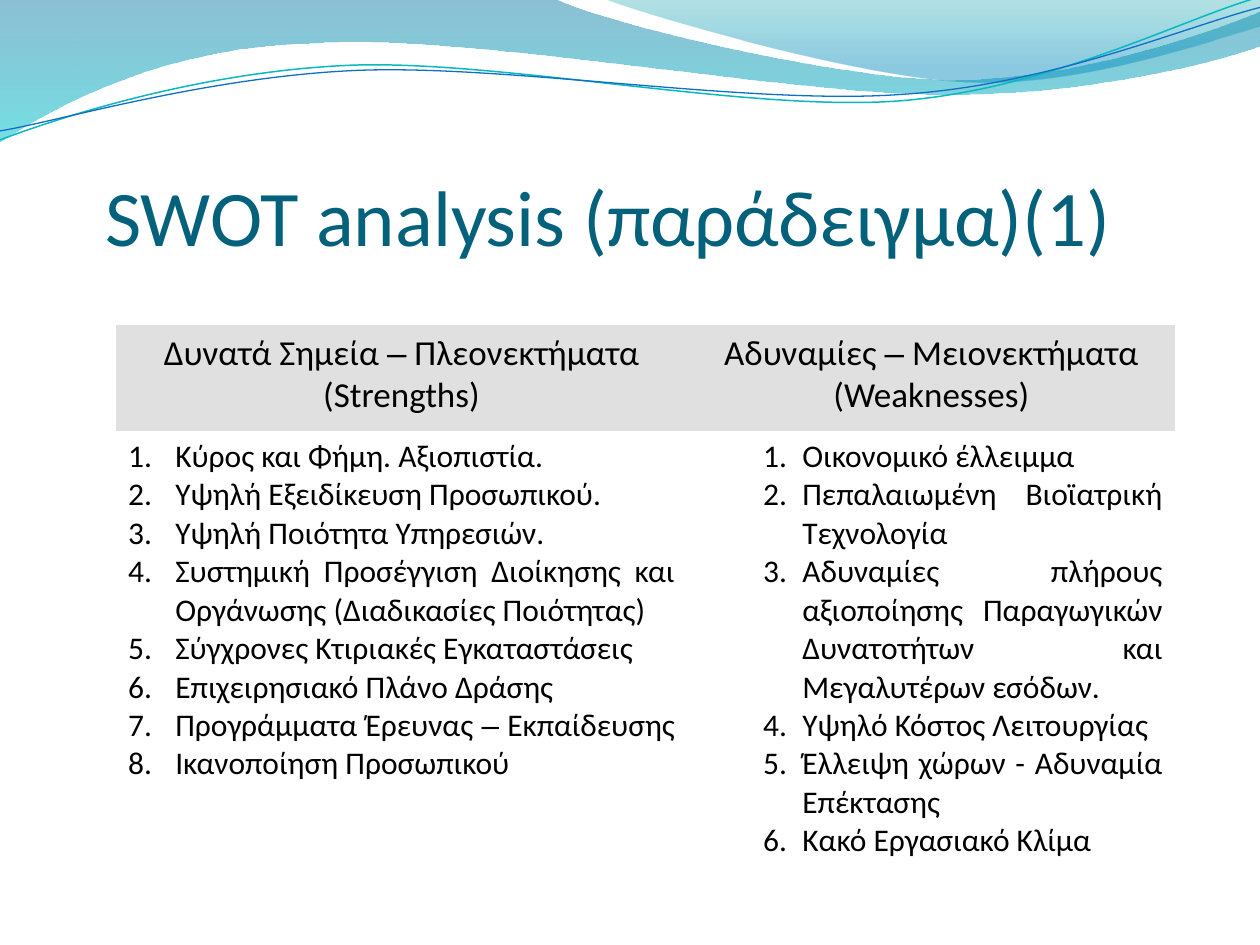
from lxml.etree import SubElement
from pptx import Presentation
from pptx.dml.color import RGBColor
from pptx.enum.text import MSO_ANCHOR, MSO_AUTO_SIZE, PP_ALIGN
from pptx.oxml.ns import qn
from pptx.util import Cm, Pt

COLORS = {
    "title": "04617B", "text": "000000", "header": "E0E0E0",
    "deep": "0074A1", "aqua": "00C6CF", "teal": "00A1A9", "sky": "008BBF",
    "teal_line": "0AB8BF", "blue_line": "0F6FC6",
}
PLAIN_TABLE_STYLE = "{2D5ABB26-0587-4C30-8999-92F81FD0307C}"

LEFT_WAVE = [
    [(0, 0)], [(11.18, -0.03)],
    [(12.09, 0.43), (16.87, 1.6), (19.25, 1.6)],
    [(21.67, 1.6), (24.33, 0.66), (25.4, 0.23)],
    [(25.43, 0.91)],
    [(24.97, 1.12), (22.1, 1.93), (18.95, 1.9)],
    [(15.8, 1.9), (9.7, 0.71), (6.53, 0.86)],
    [(3.28, 0.91), (1.17, 2.11), (-0.03, 2.87)],
    [(0, 0)],
]
RIGHT_WAVE = [
    [(12.17, -0.03)],
    [(12.93, 0.28), (17.32, 1.57), (19.53, 1.65)],
    [(21.74, 1.75), (24.41, 0.81), (25.4, 0.53)],
    [(25.4, 0)], [(12.17, -0.03)],
]
TEAL_CURVE = [
    [(-0.05, 2.22)],
    [(1.19, 1.82), (4.02, 1.04), (7.05, 1.05)],
    [(10.05, 1.07), (15.02, 2.37), (18.08, 2.29)],
    [(21.13, 2.2), (23.86, 0.91), (25.41, 0.55)],
]
BLUE_CURVE = [
    [(-0.04, 2.04)],
    [(1.16, 1.9), (4.17, 1.15), (7.2, 1.16)],
    [(10.25, 1.18), (15.13, 2.25), (18.19, 2.16)],
    [(21.21, 2.1), (23.93, 1.06), (25.45, 0.75)],
]

STRENGTHS = [
    "Κύρος και Φήμη. Αξιοπιστία.",
    "Υψηλή Εξειδίκευση Προσωπικού.",
    "Υψηλή Ποιότητα Υπηρεσιών.",
    "Συστημική Προσέγγιση Διοίκησης και Οργάνωσης (Διαδικασίες Ποιότητας) ",
    "Σύγχρονες Κτιριακές Εγκαταστάσεις",
    "Επιχειρησιακό Πλάνο Δράσης",
    "Προγράμματα Έρευνας – Εκπαίδευσης ",
    "Ικανοποίηση Προσωπικού ",
]
WEAKNESSES = [
    "Οικονομικό έλλειμμα",
    "Πεπαλαιωμένη Βιοϊατρική Τεχνολογία",
    "Αδυναμίες πλήρους αξιοποίησης Παραγωγικών Δυνατοτήτων και Μεγαλυτέρων εσόδων.",
    "Υψηλό Κόστος Λειτουργίας",
    "Έλλειψη χώρων - Αδυναμία Επέκτασης",
    "Κακό Εργασιακό Κλίμα ",
]
QUADRANTS = [
    (["Δυνατά Σημεία – Πλεονεκτήματα", "(Strengths)"], STRENGTHS, 11.53, 0, 0.95, 0.95),
    (["Αδυναμίες – Μειονεκτήματα", "(Weaknesses)"], WEAKNESSES, 9.83, 1, 2.06, 0.79),
]


class SwotSlide:
    """Holds the slide and its style, and adds each kind of element."""

    font = "Calibri"
    dash_font = "Arial"

    def __init__(self, deck):
        self.slide = deck.slides.add_slide(deck.slide_layouts[5])

    def color(self, name):
        """Return the named colour."""
        return RGBColor.from_string(COLORS[name])

    def outline(self, segments, close):
        """Add a freeform whose three-point segments are cubic curves."""
        anchors = [(Cm(x), Cm(y)) for x, y in (segment[-1] for segment in segments)]
        builder = self.slide.shapes.build_freeform(*anchors[0], scale=1.0)
        builder.add_line_segments(anchors[1:], close=close)
        shape = builder.convert_to_shape()
        shape.shadow.inherit = False
        lines = list(shape.element.iter(qn("a:lnTo")))
        for line, segment in zip(lines, segments[1:]):
            if len(segment) == 3:
                curve = line.makeelement(qn("a:cubicBezTo"))
                for x, y in segment:
                    SubElement(curve, qn("a:pt"), x=str(Cm(x) - shape.left),
                               y=str(Cm(y) - shape.top))
                line.getparent().replace(line, curve)
        return shape

    def wave(self, segments, stops):
        """Add a wave with a translucent vertical gradient."""
        shape = self.outline(segments, True)
        shape.line.fill.background()
        shape.fill.gradient()
        shape.fill.gradient_angle = 270
        for stop, (position, name, _) in zip(shape.fill.gradient_stops, stops):
            stop.position = position
            stop.color.rgb = self.color(name)
        for element, (_, _, opacity) in zip(shape.element.iter(qn("a:srgbClr")), stops):
            SubElement(element, qn("a:alpha"), val=str(opacity * 1000))

    def curve(self, segments, name, width):
        """Add an open curved line, slightly tilted."""
        shape = self.outline(segments, False)
        shape.rotation = 357.3
        shape.fill.background()
        shape.line.color.rgb = self.color(name)
        shape.line.width = Pt(width)

    def style(self, run, size, name="text"):
        """Format a run, with the dash in its own font."""
        run.font.name = self.dash_font if run.text == "–" else self.font
        run.font.size = Pt(size)
        run.font.color.rgb = self.color(name)

    def title(self, text):
        """Place and format the title in front of the waves."""
        title = self.slide.shapes.title
        title.element.getparent().append(title.element)
        title.left, title.top, title.width, title.height = Cm(2.12), Cm(2.12), Cm(22.02), Cm(3.17)
        frame = title.text_frame
        frame.text = text
        frame.auto_size = MSO_AUTO_SIZE.NONE
        frame.vertical_anchor = MSO_ANCHOR.BOTTOM
        frame.margin_left = frame.margin_right = frame.margin_bottom = 0
        frame.paragraphs[0].alignment = PP_ALIGN.LEFT
        self.style(frame.paragraphs[0].runs[0], 45, "title")

    def cell(self, cell, lines, size, alignment, level, margin, hanging, numbered):
        """Fill a table cell with hanging paragraphs."""
        frame = cell.text_frame
        for index, line in enumerate(lines):
            paragraph = frame.add_paragraph() if index else frame.paragraphs[0]
            paragraph.alignment = alignment
            paragraph.level = level
            properties = paragraph._p.get_or_add_pPr()
            properties.set("marL", str(Cm(margin)))
            properties.set("indent", str(-Cm(hanging)))
            if numbered:
                SubElement(properties, qn("a:buFont"), typeface="+mj-lt")
                SubElement(properties, qn("a:buAutoNum"), type="arabicPeriod")
            for part in filter(None, line.partition("–")):
                run = paragraph.add_run()
                run.text = part
                self.style(run, size)

    def table(self, quadrants):
        """Add the table with a header and a numbered list per column."""
        total = sum(quadrant[2] for quadrant in quadrants)
        frame = self.slide.shapes.add_table(
            2, len(quadrants), Cm(2.33), Cm(6.56), Cm(total), Cm(12.49))
        next(frame.element.iter(qn("a:tableStyleId"))).text = PLAIN_TABLE_STYLE
        table = frame.table
        table.first_row = table.horz_banding = False
        table.rows[0].height, table.rows[1].height = Cm(2.13), Cm(10.36)
        for column, (heading, items, width, level, margin, hanging) in enumerate(quadrants):
            table.columns[column].width = Cm(width)
            header, body = table.cell(0, column), table.cell(1, column)
            header.fill.solid()
            header.fill.fore_color.rgb = self.color("header")
            body.fill.background()
            self.cell(header, heading, 20, PP_ALIGN.CENTER, 0, 0.95, 0.95, False)
            self.cell(body, items, 18, PP_ALIGN.JUSTIFY, level, margin, hanging, True)


def main():
    """Build the slide and save it."""
    deck = Presentation()
    deck.slide_width, deck.slide_height = Cm(25.4), Cm(19.05)
    swot = SwotSlide(deck)
    swot.wave(LEFT_WAVE, [(0, "deep", 45), (1, "aqua", 55)])
    swot.wave(RIGHT_WAVE, [(0, "teal", 30), (0.8, "sky", 45)])
    swot.curve(TEAL_CURVE, "teal_line", 0.85)
    swot.curve(BLUE_CURVE, "blue_line", 0.75)
    swot.title("SWOT analysis (παράδειγμα)(1)")
    swot.table(QUADRANTS)
    deck.save("out.pptx")


if __name__ == "__main__":
    main()
